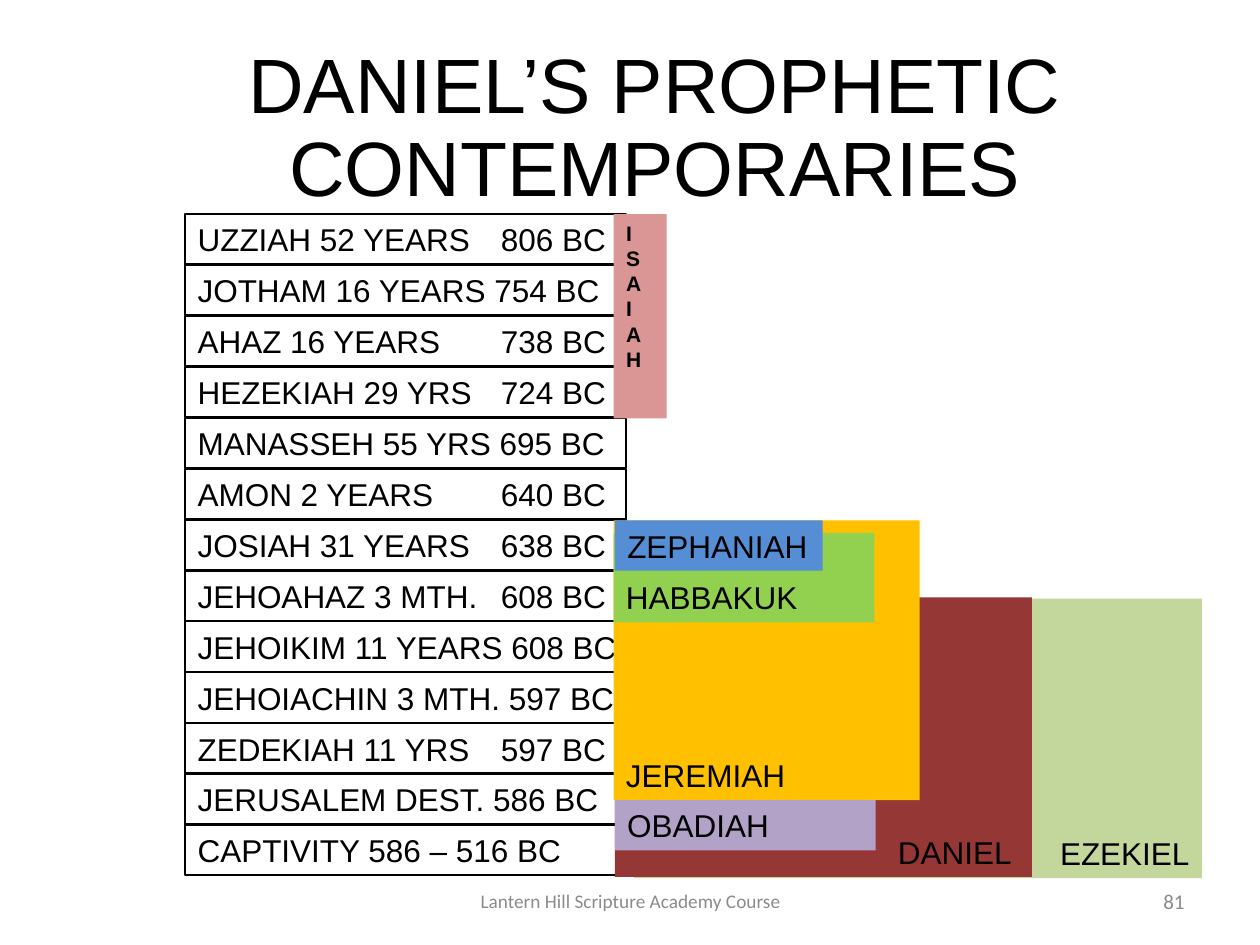
"""Build a slide charting the kings of Judah against Daniel's fellow prophets."""
from lxml import etree
from pptx import Presentation
from pptx import util as u
from pptx.dml.color import RGBColor
from pptx.enum import shapes, text
from pptx.oxml.ns import qn

TITLE = "DANIEL’S PROPHETIC CONTEMPORARIES"
REIGNS = [
    "UZZIAH 52 YEARS\t806 BC",
    "JOTHAM 16 YEARS 754 BC",
    "AHAZ 16 YEARS\t738 BC",
    "HEZEKIAH 29 YRS\t724 BC",
    "MANASSEH 55 YRS 695 BC",
    "AMON 2 YEARS\t640 BC",
    "JOSIAH 31 YEARS\t638 BC",
    "JEHOAHAZ 3 MTH.\t608 BC",
    "JEHOIKIM 11 YEARS 608 BC",
    "JEHOIACHIN 3 MTH. 597 BC",
    "ZEDEKIAH 11 YRS\t597 BC",
    "JERUSALEM DEST. 586 BC",
    "CAPTIVITY 586 – 516 BC",
]
PROPHETS = [
    ("EZEKIEL", "C3D69B", (5.03, 4.75, 4.51, 2.22), {"align": "RIGHT"}),
    ("DANIEL", "953735", (4.88, 4.74, 3.31, 2.22), {"align": "RIGHT", "right": 0.16}),
    ("JEREMIAH", "FFC000", (4.87, 4.13, 2.43, 2.22), {}),
    ("HABBAKUK", "92D050", (4.87, 4.23, 2.07, 0.71), {}),
    ("ISAIAH", "D99694", (4.87, 1.7, 0.42, 1.62),
     {"anchor": "TOP", "size": 12, "bold": True, "vert": "wordArtVert"}),
    ("ZEPHANIAH", "558ED5", (4.88, 4.13, 1.65, 0.4), {}),
    ("OBADIAH", "B3A2C7", (4.88, 6.35, 2.07, 0.4), {}),
]
FOOTERS = [
    ("Lantern Hill Scripture Academy Course", (3.42, 6.95, 3.17, 0.4), "CENTER", 11),
    ("81", (7.17, 6.95, 2.33, 0.4), "RIGHT", 12),
]
LEFT, TOP, WIDTH, HEIGHT, PITCH, YEAR_TAB = 1.47, 1.7, 3.5, 0.4, 0.404, 3.24


def rgb(color):
    """Turn a hex string into a colour."""
    return RGBColor.from_string(color)


def write(sp, words, size=18, font="Arial", color="000000", bold=False,
          align="LEFT", anchor="MIDDLE", right=0.1, vert=None):
    """Put one formatted paragraph in a shape and return it."""
    tf = sp.text_frame
    frame = {"word_wrap": True, "margin_right": u.Inches(right),
             "vertical_anchor": getattr(text.MSO_ANCHOR, anchor)}
    for name, value in frame.items():
        setattr(tf, name, value)
    if vert:
        tf._txBody.bodyPr.set("vert", vert)
    p = tf.paragraphs[0]
    p.alignment = getattr(text.PP_ALIGN, align)
    r = p.add_run()
    r.text = words
    for name, value in {"name": font, "size": u.Pt(size), "bold": bold}.items():
        setattr(r.font, name, value)
    r.font.color.rgb = rgb(color)
    return p


def add_box(s, place, fill=None):
    """Add a filled rectangle, or an outlined one when no fill is given."""
    sp = s.shapes.add_shape(shapes.MSO_SHAPE.RECTANGLE, *map(u.Inches, place))
    sp.shadow.inherit = False
    if fill:
        sp.fill.solid()
        sp.fill.fore_color.rgb = rgb(fill)
        sp.line.fill.background()
    else:
        sp.fill.background()
        sp.line.color.rgb = rgb("000000")
        sp.line.width = u.Pt(1.25)
    return sp


def add_year_tab(p):
    """Right-align the years at a tab stop."""
    tabs = etree.SubElement(p._p.get_or_add_pPr(), qn("a:tabLst"))
    etree.SubElement(tabs, qn("a:tab"), pos=str(u.Inches(YEAR_TAB)), algn="r")


def add_title(s):
    """Place and format the title."""
    sp = s.shapes.title
    place = {"left": 0.7, "top": 0.41, "width": 9, "height": 1.25}
    for name, value in place.items():
        setattr(sp, name, u.Inches(value))
    p = write(sp, TITLE, size=44, align="CENTER", right=0)
    p.line_spacing = 0.9
    for side in ("left", "top", "bottom"):
        setattr(sp.text_frame, f"margin_{side}", 0)


def main():
    """Build and save the slide."""
    prs = Presentation()
    prs.slide_width, prs.slide_height = u.Inches(10), u.Inches(7.5)
    s = prs.slides.add_slide(prs.slide_layouts[5])
    add_title(s)
    for i, reign in enumerate(REIGNS):
        sp = add_box(s, (LEFT, TOP + i * PITCH, WIDTH, HEIGHT))
        add_year_tab(write(sp, reign, right=0))
    for name, fill, place, style in PROPHETS:
        write(add_box(s, place, fill), name, **{"anchor": "BOTTOM", **style})
    for words, place, align, size in FOOTERS:
        sp = s.shapes.add_textbox(*map(u.Inches, place))
        write(sp, words, size=size, font="Calibri", color="8B8B8B", align=align)
    prs.save("out.pptx")


if __name__ == "__main__":
    main()
